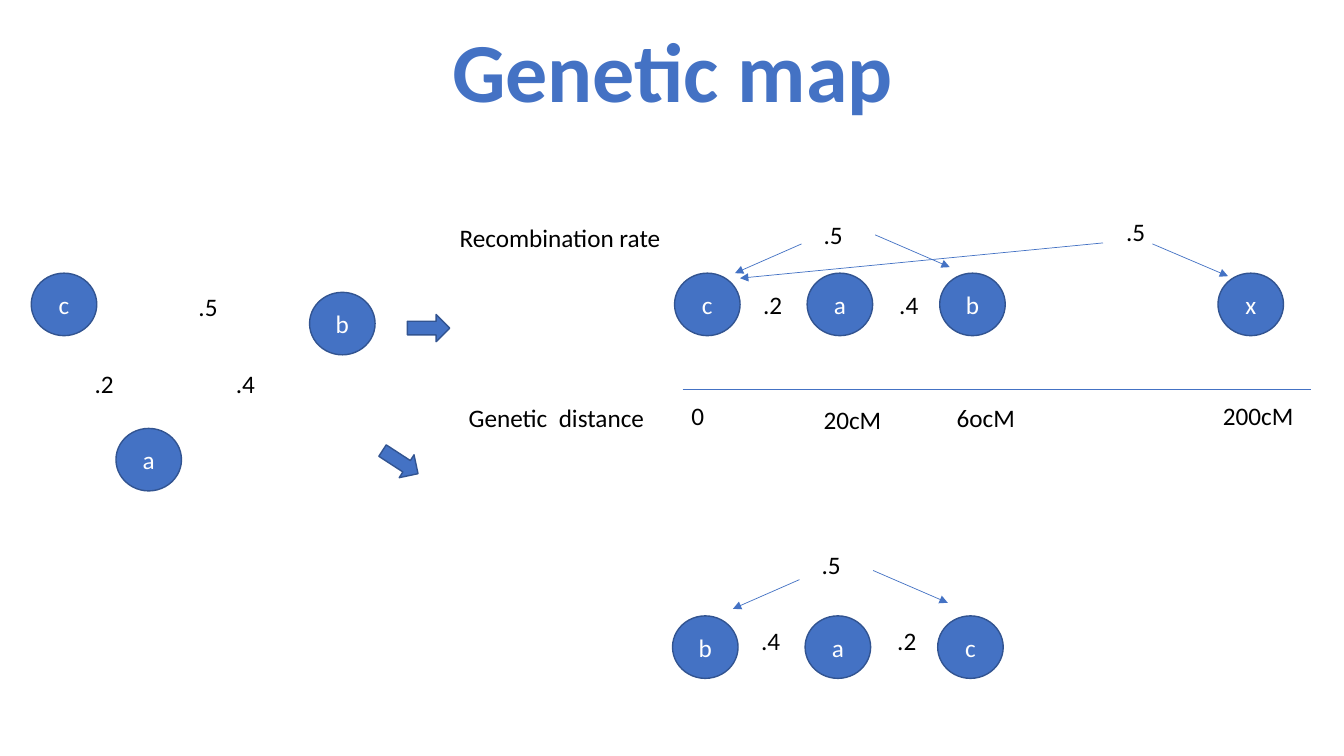
from lxml.etree import SubElement
from pptx import Presentation
from pptx.dml.color import RGBColor
from pptx.enum.shapes import MSO_CONNECTOR as Connector, MSO_SHAPE as Shape
from pptx.enum.text import MSO_ANCHOR as Anchor, MSO_AUTO_SIZE as AutoSize, PP_ALIGN as Align
from pptx.oxml.ns import qn
from pptx.util import Inches, Pt

TITLE = "Genetic map"
BLUE, DARK_BLUE, WHITE, BLACK = "4472C4", "325491", "FFFFFF", "000000"
FONT = "Calibri"

LOOSE_GENES = [("c", 0.31, 2.71), ("a", 1.15, 4.25), ("b", 3.07, 2.9), ("x", 12.08, 2.71)]
LABELS = [
    (".5", 1.87, 2.84, 0.6),
    (".2", 0.84, 3.61, 0.6),
    (".4", 2.24, 3.61, 0.6),
    (".5", 11.07, 2.1, 0.6),
    ("Recombination rate", 4.46, 2.16, 2.21),
    ("Genetic  distance", 4.55, 3.94, 2.21),
    ("0", 6.76, 3.92, 0.6),
    ("20cM", 8.07, 3.96, 0.97),
    ("6ocM", 9.39, 3.94, 1.12),
    ("200cM", 12.03, 3.92, 1.02),
]
GENE_MAPS = [
    {"genes": "cab", "rates": [".2", ".4"], "span": ".5", "left": 6.69,
     "gene_top": 2.71, "rate_top": 2.82, "span_top": 2.13, "arrow_top": 2.42},
    {"genes": "bac", "rates": [".4", ".2"], "span": ".5", "left": 6.67,
     "gene_top": 6.11, "rate_top": 6.15, "span_top": 5.4, "arrow_top": 5.75},
]
SPAN_ARROWS = [((1.26, 0), (0.6, 0.29)), ((1.99, -0.09), (2.73, 0.23))]
X_ARROWS = [((11.43, 2.42), (12.18, 2.74)), ((10.94, 2.41), (7.34, 2.76))]
SCALE = ((6.77, 3.86), (13, 3.86))
BLOCK_ARROWS = [(4.04, 3.12, 0), (3.76, 4.45, 33)]
GENE_SIZE = (0.65, 0.62)
GENE_STEP = 1.315
RATE_STEP = 1.35


def color(value):
    return RGBColor.from_string(value)


def style_text(paragraph, text, text_color, size=18):
    paragraph.text = text
    paragraph.font.name = FONT
    paragraph.font.size = Pt(size)
    paragraph.font.color.rgb = color(text_color)


def add_blue_shape(kind, left, top, width, height):
    shape = slide.shapes.add_shape(kind, Inches(left), Inches(top), Inches(width), Inches(height))
    shape.shadow.inherit = False
    shape.fill.solid()
    shape.fill.fore_color.rgb = color(BLUE)
    shape.line.color.rgb = color(DARK_BLUE)
    shape.line.width = Pt(1)
    return shape


def add_gene(name, left, top):
    frame = add_blue_shape(Shape.OVAL, left, top, *GENE_SIZE).text_frame
    frame.vertical_anchor = Anchor.MIDDLE
    paragraph = frame.paragraphs[0]
    style_text(paragraph, name, WHITE)
    paragraph.alignment = Align.CENTER


def add_label(text, left, top, width=0.6):
    box = slide.shapes.add_textbox(Inches(left), Inches(top), Inches(width), Inches(0.4))
    box.text_frame.word_wrap = True
    box.text_frame.auto_size = AutoSize.SHAPE_TO_FIT_TEXT
    style_text(box.text_frame.paragraphs[0], text, BLACK)


def add_line(start, end, arrow=True):
    points = [Inches(value) for value in (*start, *end)]
    connector = slide.shapes.add_connector(Connector.STRAIGHT, *points)
    connector.line.color.rgb = color(BLUE)
    connector.line.width = Pt(0.5)
    if arrow:
        SubElement(connector.line._get_or_add_ln(), qn("a:tailEnd"), type="triangle")
    SubElement(connector._element.spPr, qn("a:effectLst"))


def add_gene_map(gene_map):
    left, arrow_top = gene_map["left"], gene_map["arrow_top"]
    for index, gene in enumerate(gene_map["genes"]):
        add_gene(gene, left + index * GENE_STEP, gene_map["gene_top"])
    for index, rate in enumerate(gene_map["rates"]):
        add_label(rate, left + 0.78 + index * RATE_STEP, gene_map["rate_top"])
    add_label(gene_map["span"], left + 1.38, gene_map["span_top"])
    for ends in SPAN_ARROWS:
        add_line(*[(left + x, arrow_top + y) for x, y in ends])


presentation = Presentation()
presentation.slide_width = Inches(13.33)
presentation.slide_height = Inches(7.5)
slide = presentation.slides.add_slide(presentation.slide_layouts[5])

title = slide.shapes.title
title.left, title.top, title.width, title.height = Inches(2.17), Inches(0), Inches(9), Inches(1.25)
title.text_frame.vertical_anchor = Anchor.BOTTOM
heading = title.text_frame.paragraphs[0]
style_text(heading, TITLE, BLUE, 60)
heading.font.bold = True
heading.alignment = Align.CENTER
heading.line_spacing = 0.9

for gene in LOOSE_GENES:
    add_gene(*gene)
for label in LABELS:
    add_label(*label)
for gene_map in GENE_MAPS:
    add_gene_map(gene_map)
for ends in X_ARROWS:
    add_line(*ends)
add_line(*SCALE, arrow=False)
for left, top, angle in BLOCK_ARROWS:
    add_blue_shape(Shape.RIGHT_ARROW, left, top, 0.42, 0.27).rotation = angle

presentation.save("out.pptx")
